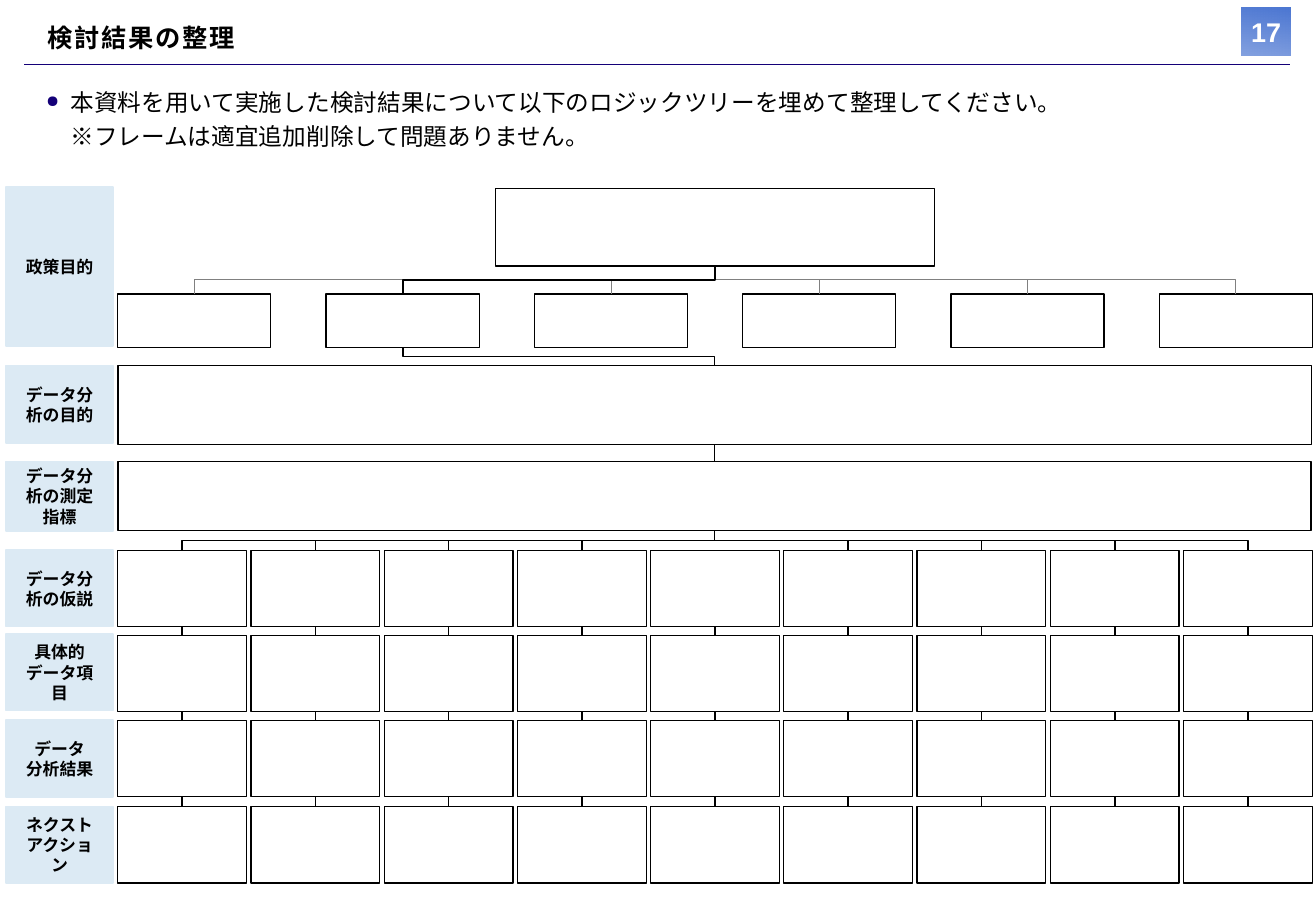
from dataclasses import dataclass
from typing import NamedTuple

from lxml.etree import SubElement
from pptx import Presentation
from pptx.dml.color import RGBColor
from pptx.enum.shapes import MSO_CONNECTOR as Connector, MSO_SHAPE as Shape
from pptx.enum.text import MSO_ANCHOR as Anchor, PP_ALIGN as Align
from pptx.oxml.ns import qn
from pptx.util import Inches, Pt


@dataclass(frozen=True)
class Theme:
    """Colours, fonts and sizes of the slide."""
    black: str = "000000"
    white: str = "FFFFFF"
    grey: str = "808080"
    navy: str = "140078"
    label: str = "DCEAF4"
    badge: str = "4B76D2"
    font: str = "Arial"
    title_font: str = "Noto Sans CJK JP"
    label_size: float = 10
    body_size: float = 14
    title_size: float = 15
    number_size: float = 16
    hairline: float = 0.5
    frame: float = 0.75
    branch: float = 1


class Box(NamedTuple):
    """Left, top, width and height in inches."""
    left: float
    top: float
    width: float
    height: float


class Label(NamedTuple):
    """Row heading with its vertical extent in inches."""
    text: str
    top: float
    height: float


THEME = Theme()
LABELS = [
    Label("政策目的", 1.54, 1.31),
    Label("データ分析の目的", 3.01, 0.64),
    Label("データ分析の測定指標", 3.8, 0.57),
    Label("データ分析の仮説", 4.53, 0.63),
    Label("具体的\nデータ項目", 5.22, 0.63),
    Label("データ\n分析結果", 5.93, 0.63),
    Label("ネクスト\nアクション", 6.64, 0.63),
]
TREE_LEFT = 0.97
PURPOSE_COUNT, PURPOSE_PITCH = 6, (9.54 - TREE_LEFT) / 5
ITEM_COUNT, ITEM_PITCH = 9, (9.74 - TREE_LEFT) / 8
CHOSEN_PURPOSE = 1


def write(frame, text, *, size, font=THEME.font, color=THEME.black, bold=False,
          align=Align.LEFT, anchor=Anchor.TOP, wrap=True, margin=None, spacing=None):
    """Fill a text frame and format every run."""
    frame.text = text
    frame.word_wrap = wrap
    frame.vertical_anchor = anchor
    if margin is not None:
        frame.margin_left = frame.margin_right = Inches(margin)
        frame.margin_top = frame.margin_bottom = Inches(margin)
    for paragraph in frame.paragraphs:
        paragraph.alignment = align
        for run in paragraph.runs:
            run.font.size, run.font.bold, run.font.name = Pt(size), bold, font
            run.font.color.rgb = RGBColor.from_string(color)
            properties = run.font._element
            SubElement(properties, qn("a:ea"), typeface=font)
            if spacing is not None:
                properties.set("spc", str(int(spacing * 100)))


def add_box(slide, box: Box, fill=THEME.white, line=THEME.black,
            width=THEME.frame, kind=Shape.RECTANGLE):
    """Add a filled and outlined shape."""
    shape = slide.shapes.add_shape(kind, *map(Inches, box))
    shape.shadow.inherit = False
    shape.fill.solid()
    shape.fill.fore_color.rgb = RGBColor.from_string(fill)
    shape.line.color.rgb = RGBColor.from_string(line)
    shape.line.width = Pt(width)
    return shape


def add_line(slide, kind, begin, end, color=THEME.black, width=THEME.branch):
    """Add a connector between two points."""
    connector = slide.shapes.add_connector(kind, *begin, *end)
    connector.line.color.rgb = RGBColor.from_string(color)
    connector.line.width = Pt(width)
    SubElement(connector._element.spPr, qn("a:effectLst"))
    return connector


def join(slide, upper, lower) -> None:
    """Join the bottom of one shape to the top of another."""
    connector = add_line(slide, Connector.STRAIGHT, (0, 0), (0, 0))
    connector.begin_connect(upper, 2)
    connector.end_connect(lower, 0)


def add_branch(slide, upper, lower, color=THEME.black, width=THEME.branch) -> None:
    """Draw a vertical elbow from the top of one shape to the bottom of another."""
    begin_x, begin_y = lower.left + lower.width // 2, lower.top
    end_x, end_y = upper.left + upper.width // 2, upper.top + upper.height
    middle_x, middle_y = (begin_x + end_x) // 2, (begin_y + end_y) // 2
    rise, reach = (begin_y - end_y) // 2, abs(end_x - begin_x) // 2
    is_left = begin_x < end_x
    side = rise if is_left else -rise
    connector = add_line(slide, Connector.ELBOW, (middle_x + side, middle_y + reach),
                         (middle_x - side, middle_y - reach), color, width)
    connector._element.spPr.find(qn("a:xfrm")).set("rot", str((90 if is_left else 270) * 60000))


def add_text(slide, box: Box, text: str, **style):
    """Add a text box and return its frame."""
    frame = slide.shapes.add_textbox(*map(Inches, box)).text_frame
    write(frame, text, margin=0, **style)
    return frame


def add_header(slide) -> None:
    """Draw the page badge, rule and title."""
    badge = add_box(slide, Box(10.22, 0.06, 0.4, 0.4))
    badge.line.fill.background()
    badge.fill.gradient()
    badge.fill.gradient_angle = 260
    for stop in badge.fill.gradient_stops:
        stop.color.rgb = RGBColor.from_string(THEME.badge)
    last_color = list(badge._element.spPr.iter(qn("a:srgbClr")))[-1]
    SubElement(last_color, qn("a:alpha"), val="68000")
    add_line(slide, Connector.STRAIGHT, (Inches(0.2), Inches(0.53)),
             (Inches(10.62), Inches(0.53)), THEME.navy, THEME.hairline)
    add_text(slide, Box(10.28, 0.13, 0.28, 0.27), "17", size=THEME.number_size, bold=True,
             color=THEME.white, align=Align.CENTER, anchor=Anchor.MIDDLE, wrap=False)
    add_text(slide, Box(0.39, 0.18, 1.57, 0.25), "検討結果の整理", size=THEME.title_size,
             font=THEME.title_font, bold=True, wrap=False, spacing=1)


def add_instruction(slide) -> None:
    """Write the bulleted instruction."""
    text = ("本資料を用いて実施した検討結果について以下のロジックツリーを埋めて整理してください。\v"
            "※フレームは適宜追加削除して問題ありません。")
    frame = add_text(slide, Box(0.38, 0.68, 10.07, 0.86), text, size=THEME.body_size)
    paragraph = frame.paragraphs[0]
    paragraph.line_spacing, paragraph.space_after = 1.2, Pt(3)
    properties = paragraph._p.get_or_add_pPr()
    properties.set("marL", str(Inches(0.2)))
    properties.set("indent", str(Inches(-0.2)))
    SubElement(SubElement(properties, qn("a:buClr")), qn("a:srgbClr"), val=THEME.navy)
    SubElement(properties, qn("a:buSzPct"), val="70000")
    SubElement(properties, qn("a:buChar"), char="●")


def add_item_row(slide, top: float) -> list:
    """Add one row of item frames."""
    return [add_box(slide, Box(TREE_LEFT + ITEM_PITCH * column, top, 1.06, 0.63))
            for column in range(ITEM_COUNT)]


def add_tree(slide) -> None:
    """Draw the logic tree frames and branches."""
    policy = add_box(slide, Box(4.08, 1.55, 3.61, 0.64))
    purposes = [add_box(slide, Box(TREE_LEFT + PURPOSE_PITCH * column, 2.42, 1.26, 0.44))
                for column in range(PURPOSE_COUNT)]
    goal = add_box(slide, Box(TREE_LEFT, 3.01, 9.82, 0.65), kind=Shape.FLOWCHART_PROCESS)
    indicator = add_box(slide, Box(TREE_LEFT, 3.8, 9.82, 0.57))
    chosen = purposes.pop(CHOSEN_PURPOSE)
    for purpose in purposes:
        add_branch(slide, policy, purpose, THEME.grey, THEME.hairline)
    add_branch(slide, policy, chosen)
    add_branch(slide, chosen, goal)
    join(slide, goal, indicator)
    hypotheses, actions = add_item_row(slide, 4.53), add_item_row(slide, 6.64)
    for column, (hypothesis, action) in enumerate(zip(hypotheses, actions)):
        join(slide, hypothesis, action)
        if column != ITEM_COUNT // 2:
            add_branch(slide, indicator, hypothesis)
    for top in (5.23, 5.93):
        add_item_row(slide, top)


def main() -> None:
    """Build and save the slide."""
    presentation = Presentation()
    presentation.slide_width, presentation.slide_height = Inches(10.83), Inches(7.5)
    slide = presentation.slides.add_slide(presentation.slide_layouts[6])
    add_header(slide)
    for label in LABELS:
        shape = add_box(slide, Box(0.05, label.top, 0.88, label.height),
                        THEME.label, THEME.label, THEME.branch)
        write(shape.text_frame, label.text, size=THEME.label_size, bold=True,
              align=Align.CENTER, anchor=Anchor.MIDDLE)
    add_tree(slide)
    add_instruction(slide)
    presentation.save("out.pptx")


if __name__ == "__main__":
    main()
